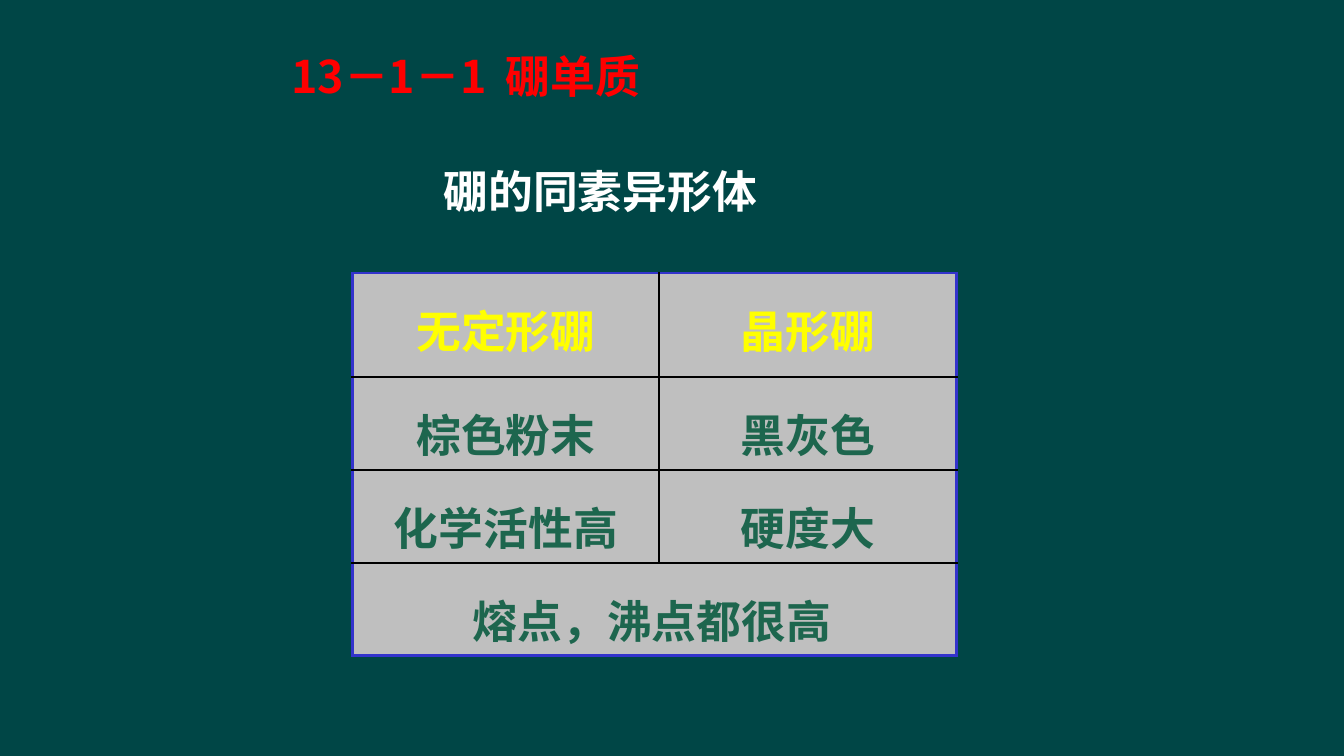
import pptx
import pptx.dml.color
import pptx.enum.text
import pptx.oxml.ns
import pptx.util
from lxml import etree

Cm, Pt = pptx.util.Cm, pptx.util.Pt
RGBColor = pptx.dml.color.RGBColor
ALIGN = pptx.enum.text.PP_ALIGN
qn = pptx.oxml.ns.qn

DARK_TEAL = RGBColor(0x00, 0x46, 0x46)
RED = RGBColor(0xFF, 0x00, 0x00)
WHITE = RGBColor(0xFF, 0xFF, 0xFF)
YELLOW = RGBColor(0xFF, 0xFF, 0x00)
GREEN = RGBColor(0x1D, 0x66, 0x4E)
GREY = RGBColor(0xBF, 0xBF, 0xBF)
BLUE = RGBColor(0x33, 0x33, 0xCC)
BLACK = RGBColor(0x00, 0x00, 0x00)

ALLOTROPES = [
    ["无定形硼", "晶形硼"],
    ["棕色粉末", "黑灰色"],
    ["化学活性高", "硬度大"],
    ["熔点，沸点都很高", ""],
]


class SlideBuilder:
    font_name = "Noto Sans CJK SC"
    font_size = Pt(32)

    def __init__(self, deck):
        self.page = deck.slides.add_slide(deck.slide_layouts[6])
        fill = self.page.background.fill
        fill.solid()
        fill.fore_color.rgb = DARK_TEAL

    def style(self, para, color, indent=0, tab=None):
        properties = para._p.get_or_add_pPr()
        if indent:
            properties.set("marL", str(Cm(indent)))
            properties.set("indent", "0")
        if tab:
            tabs = etree.SubElement(properties, qn("a:tabLst"))
            etree.SubElement(tabs, qn("a:tab"), pos=str(Cm(tab)), algn="l")
        font = para.font
        font.size, font.bold, font.name = self.font_size, True, self.font_name
        font.color.rgb = color
        etree.SubElement(font._element, qn("a:ea"), typeface=self.font_name)

    def text_box(self, left, top, width, height):
        box = self.page.shapes.add_textbox(Cm(left), Cm(top), Cm(width), Cm(height))
        frame = box.text_frame
        frame.word_wrap = True
        frame.margin_left = frame.margin_top = 0
        frame.margin_right = frame.margin_bottom = 0
        return frame

    def border(self, cell, side, outer):
        width, color = (2.25, BLUE) if outer else (1.5, BLACK)
        line = etree.SubElement(cell._tc.get_or_add_tcPr(), qn("a:ln" + side),
                                w=str(Pt(width)))
        fill = etree.SubElement(line, qn("a:solidFill"))
        etree.SubElement(fill, qn("a:srgbClr"), val=str(color))

    def table(self, left, top, widths, heights, rows):
        frame = self.page.shapes.add_table(len(rows), len(widths), Cm(left), Cm(top),
                                           Cm(sum(widths)), Cm(sum(heights)))
        table = frame.table
        table.first_row = table.horz_banding = False
        for column, width in zip(table.columns, widths):
            column.width = Cm(width)
        for row, height in zip(table.rows, heights):
            row.height = Cm(height)

        last_row, last_column = len(rows) - 1, len(widths) - 1
        table.cell(last_row, 0).merge(table.cell(last_row, last_column))
        for r, texts in enumerate(rows):
            for c, text in enumerate(texts):
                cell = table.cell(r, c)
                cell.margin_left = cell.margin_right = cell.margin_bottom = 0
                cell.margin_top = Cm(0.6)
                self.border(cell, "L", c == 0)
                self.border(cell, "R", c == last_column or r == last_row)
                self.border(cell, "T", r == 0)
                self.border(cell, "B", r == last_row)
                cell.fill.solid()
                cell.fill.fore_color.rgb = GREY
                if text:
                    para = cell.text_frame.paragraphs[0]
                    para.text = text
                    para.space_before = Pt(17)
                    self.style(para, YELLOW if r == 0 else GREEN,
                               indent=3.02 if r == last_row else 0)
                    para.alignment = ALIGN.LEFT if r == last_row else ALIGN.CENTER


def main():
    deck = pptx.Presentation()
    deck.slide_width, deck.slide_height = Cm(33.87), Cm(19.05)
    builder = SlideBuilder(deck)

    # Allotrope table
    builder.table(8.89, 6.88, [7.72, 7.49], [2.62, 2.34, 2.34, 2.34], ALLOTROPES)

    # Section number and headings
    frame = builder.text_box(7.34, 1.22, 15.93, 4.34)
    section = frame.paragraphs[0]
    section.add_run().text = "13－1－1\t硼单质"
    builder.style(section, RED, tab=5.41)
    heading = frame.add_paragraph()
    heading.text = "硼的同素异形体"
    heading.line_spacing = Pt(37.5)
    heading.space_before = Pt(45)
    builder.style(heading, WHITE, indent=3.84)

    deck.save("out.pptx")


if __name__ == "__main__":
    main()
